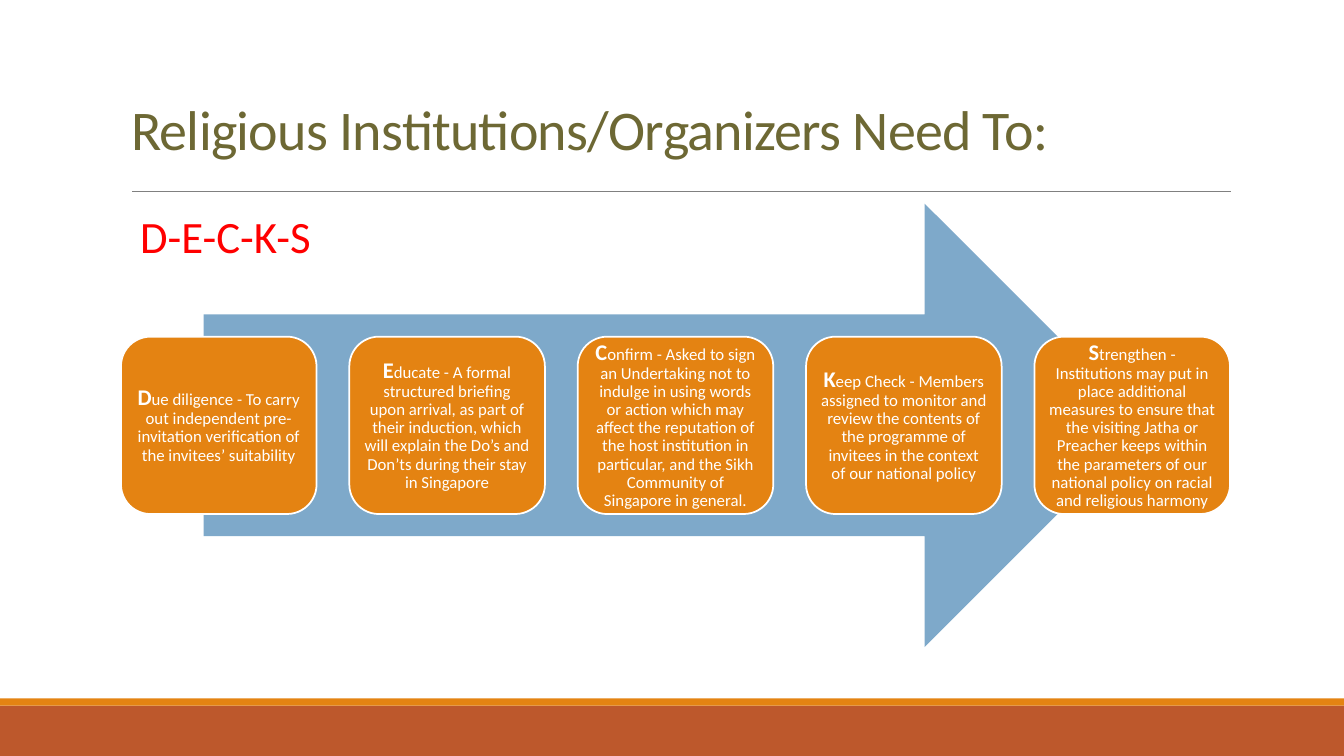
from pptx import Presentation
from pptx.dml.color import RGBColor
from pptx.enum.shapes import MSO_CONNECTOR, MSO_SHAPE
from pptx.enum.text import MSO_ANCHOR, MSO_AUTO_SIZE, PP_ALIGN
from pptx.oxml.ns import qn
from pptx.util import Inches, Pt
from lxml.etree import SubElement

# Content
TITLE = "Religious Institutions/Organizers Need To:"
ACRONYM = "D-E-C-K-S"
STEPS = [
    "Due diligence - To carry out independent pre-invitation verification of the "
    "invitees’ suitability",
    "Educate - A formal structured briefing upon arrival, as part of their induction, "
    "which will explain the Do’s and Don’ts during their stay in Singapore",
    "Confirm - Asked to sign an Undertaking not to indulge in using words or action "
    "which may affect the reputation of the host institution in particular, and the "
    "Sikh Community of Singapore in general.",
    "Keep Check - Members assigned to monitor and review the contents of the programme "
    "of invitees in the context of our national policy",
    "Strengthen - Institutions may put in place additional measures to ensure that the "
    "visiting Jatha or Preacher keeps within the parameters of our national policy on "
    "racial and religious harmony",
]

# Style and layout, in inches and points
COLORS = {"rust": "BD582C", "orange": "E48312", "olive": "6D6834", "blue": "7EA9CA",
          "red": "FF0000", "white": "FFFFFF", "gray": "808080"}
FONT = "Calibri"
STEP_LEFT, STEP_TOP, STEP_WIDTH, STEP_HEIGHT = 1.2, 3.34, 1.94, 1.76
STEP_PITCH = 2.265
STEP_MARGINS = {"margin_left": Inches(0.06), "margin_right": Inches(0.06),
                "margin_top": Inches(0.07), "margin_bottom": Inches(0.07)}


def color(name):
    return RGBColor.from_string(COLORS[name])


def add_shape(page, kind, place, fill, outline=None):
    shape = page.shapes.add_shape(kind, *map(Inches, place))
    shape.shadow.inherit = False
    shape.fill.solid()
    shape.fill.fore_color.rgb = color(fill)
    if outline:
        shape.line.color.rgb = color(outline)
        shape.line.width = Pt(1.25)
    else:
        shape.line.fill.background()
    return shape


def add_span(para, text, size, tint, bold=False):
    span = para.add_run()
    span.text = text
    for name, value in {"name": FONT, "size": Pt(size), "bold": bold}.items():
        setattr(span.font, name, value)
    span.font.color.rgb = color(tint)
    return span


def format_frame(frame, values):
    for name, value in values.items():
        setattr(frame, name, value)


def main():
    deck = Presentation()
    deck.slide_width, deck.slide_height = Inches(13.33), Inches(7.5)
    page = deck.slides.add_slide(deck.slide_layouts[5])

    # Footer bands and title rule
    add_shape(page, MSO_SHAPE.RECTANGLE, (0, 7, 13.33, 0.5), "rust")
    add_shape(page, MSO_SHAPE.RECTANGLE, (0, 6.93, 13.33, 0.07), "orange")
    rule = page.shapes.add_connector(
        MSO_CONNECTOR.STRAIGHT, *map(Inches, (1.31, 1.9, 12.21, 1.9)))
    rule.line.color.rgb = color("gray")
    rule.line.width = Pt(0.5)
    SubElement(rule._element.spPr, qn("a:effectLst"))

    # Title
    title = page.shapes.title
    title.left, title.top, title.width, title.height = map(Inches, (1.2, 0.52, 11, 1.14))
    format_frame(title.text_frame, {"vertical_anchor": MSO_ANCHOR.BOTTOM, "word_wrap": True,
                                    "auto_size": MSO_AUTO_SIZE.NONE})
    para = title.text_frame.paragraphs[0]
    para.alignment, para.line_spacing = PP_ALIGN.LEFT, 0.85
    span = add_span(para, TITLE, 40, "olive")
    span.font._element.set("spc", "-50")

    # Arrow behind the steps
    add_shape(page, MSO_SHAPE.RIGHT_ARROW, (2.02, 2.02, 9.35, 4.4), "blue")

    # Steps, each with a large bold initial
    for index, step in enumerate(STEPS):
        place = (STEP_LEFT + index * STEP_PITCH, STEP_TOP, STEP_WIDTH, STEP_HEIGHT)
        box = add_shape(page, MSO_SHAPE.ROUNDED_RECTANGLE, place, "orange", "white")
        format_frame(box.text_frame, {"vertical_anchor": MSO_ANCHOR.MIDDLE, "word_wrap": True,
                                      **STEP_MARGINS})
        para = box.text_frame.paragraphs[0]
        para.alignment, para.line_spacing = PP_ALIGN.CENTER, 0.9
        add_span(para, step[0], 16, "white", bold=True)
        add_span(para, step[1:], 12, "white")

    # Acronym
    box = page.shapes.add_textbox(*map(Inches, (1.29, 2.02, 5.22, 0.64)))
    format_frame(box.text_frame, {"word_wrap": True,
                                  "auto_size": MSO_AUTO_SIZE.SHAPE_TO_FIT_TEXT})
    add_span(box.text_frame.paragraphs[0], ACRONYM, 32, "red")

    deck.save("out.pptx")


if __name__ == "__main__":
    main()
